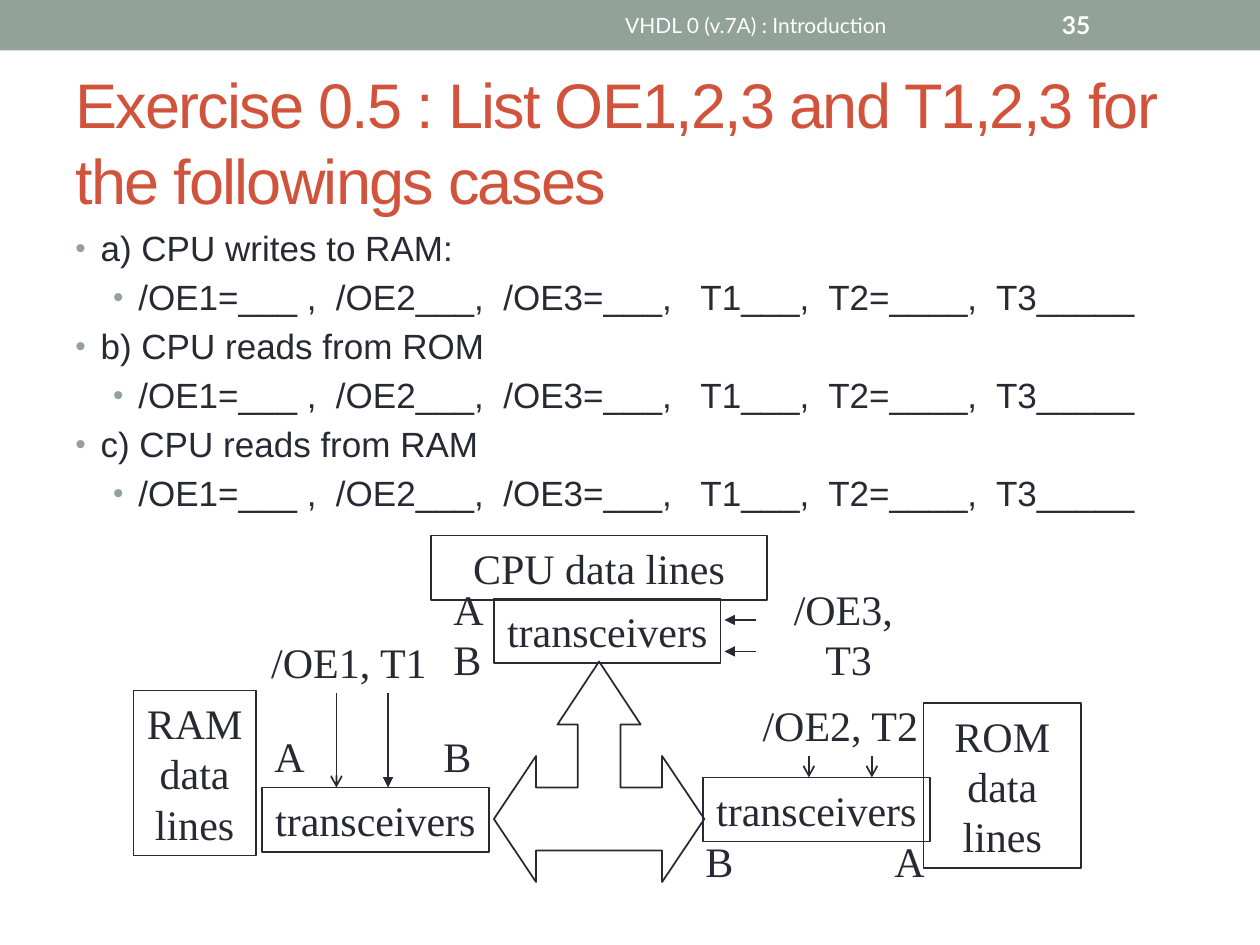
from lxml import etree
from pptx import Presentation
from pptx import util as u
from pptx.dml.color import RGBColor
from pptx.enum import shapes, text
from pptx.oxml.ns import qn

INK, SAGE, RUST, WHITE = "292934", "93A299", "D2533C", "FFFFFF"
SERIF = {"name": "Times New Roman", "size": u.Pt(24)}
BLANKS = "/OE1=___ ,  /OE2___,  /OE3=___,   T1___,  T2=____,  T3_____"
LEFT, CENTER = text.PP_ALIGN.LEFT, text.PP_ALIGN.CENTER
TOP, MIDDLE = text.MSO_ANCHOR.TOP, text.MSO_ANCHOR.MIDDLE


def rgb(value):
    return RGBColor.from_string(value)


def inches(box):
    return [u.Inches(v) for v in box]


def write(sp, lines, fmt, color=INK, align=CENTER, anchor=MIDDLE, wrap=True):
    tf = sp.text_frame
    tf.word_wrap, tf.vertical_anchor = wrap, anchor
    for i, line in enumerate(lines):
        p = tf.add_paragraph() if i else tf.paragraphs[0]
        p.alignment = align
        p.line_spacing = u.Pt(1.2 * fmt["size"].pt)
        r = p.add_run()
        r.text = line
        for key, value in fmt.items():
            setattr(r.font, key, value)
        r.font.color.rgb = rgb(color)
    return tf


def label(s, box, lines, fmt=SERIF, **options):
    return write(s.shapes.add_textbox(*inches(box)), lines, fmt, **options)


def outline(sp):
    sp.shadow.inherit = False
    sp.fill.background()
    sp.line.color.rgb, sp.line.width = rgb(INK), u.Pt(1)


def block(s, box, lines, wrap=False):
    sp = s.shapes.add_shape(shapes.MSO_SHAPE.RECTANGLE, *inches(box))
    outline(sp)
    write(sp, lines, SERIF, wrap=wrap)


def arrow(s, start, end, head):
    c = s.shapes.add_connector(shapes.MSO_CONNECTOR.STRAIGHT, *inches(start + end))
    c.line.color.rgb, c.line.width = rgb(INK), u.Pt(1)
    etree.SubElement(c.line._get_or_add_ln(), qn("a:tailEnd"), type=head)
    etree.SubElement(c._element.spPr, qn("a:effectLst"))


def bus_arrow(s, box):
    """Three-way arrow, mirrored about the centre of its box."""
    x, y, w, h = box
    half = [(0, 0), (0.33, 0.5), (0.17, 0.5), (0.17, 1), (0.5, 1),
            (0.5, 0.75), (w / 2, 1.25), (0.5, h), (0.5, 1.5)]
    points = half + [(-dx, dy) for dx, dy in half[:0:-1]]
    points = [(u.Inches(x + w / 2 + dx), u.Inches(y + dy)) for dx, dy in points]
    fb = s.shapes.build_freeform(*points[0])
    fb.add_line_segments(points[1:], close=True)
    outline(fb.convert_to_shape())


def header(s, box):
    x, y, w, h = box
    sp = s.shapes.add_shape(shapes.MSO_SHAPE.RECTANGLE, *inches(box))
    sp.shadow.inherit = False
    sp.fill.solid()
    sp.fill.fore_color.rgb = rgb(SAGE)
    sp.line.fill.background()
    label(s, (x + 3.75, y + 0.02, 4.5, h - 0.04), ["VHDL 0 (v.7A) : Introduction"],
          {"name": "Lato", "size": u.Pt(12)}, color=WHITE)
    label(s, (x + 8.33, y + 0.02, 1.17, h - 0.04), ["35"],
          {"name": "Lato", "size": u.Pt(14), "bold": True}, color=WHITE, align=LEFT)


def title(s, box):
    tf = label(s, box, ["Exercise 0.5 : List OE1,2,3 and T1,2,3 for the followings cases"],
               {"name": "Arial", "size": u.Pt(36)}, color=RUST, align=LEFT)
    tf.paragraphs[0].runs[0].font._element.set("spc", "-100")


def bullet(p, margin):
    pPr = p._p.get_or_add_pPr()
    pPr.set("marL", str(u.Inches(margin)))
    pPr.set("indent", str(u.Inches(-0.2)))
    clr = etree.SubElement(pPr, qn("a:buClr"))
    etree.SubElement(clr, qn("a:srgbClr"), val=SAGE)
    etree.SubElement(pPr, qn("a:buSzPct"), val="85000")
    etree.SubElement(pPr, qn("a:buFont"), typeface="Arial")
    etree.SubElement(pPr, qn("a:buChar"), char="•")


def cases(s, box):
    lines = []
    for case in ("a) CPU writes to RAM:", "b) CPU reads from ROM", "c) CPU reads from RAM"):
        lines += [case, BLANKS]
    tf = label(s, box, lines, {"name": "Arial", "size": u.Pt(20)}, align=LEFT, anchor=TOP)
    for i, p in enumerate(tf.paragraphs):
        p.level = i % 2
        p.space_before = u.Pt(4)
        bullet(p, 0.5 if p.level else 0.2)


def diagram(s, box):
    left, top = box[:2]

    def at(x, y, *size):
        return (left + x, top + y, *size)

    bus_arrow(s, at(2.86, 1, 1.67, 1.75))
    block(s, at(2.36, 0, 2.67, 0.51), ["CPU data lines"], wrap=True)
    for x, y in ((4.52, 1.92), (1.02, 2), (2.86, 0.5)):
        block(s, at(x, y, 1.8, 0.51), ["transceivers"])
    block(s, at(6.27, 1.33, 1.25, 1.31), ["ROM", "data", "lines"], wrap=True)
    block(s, at(0, 1.23, 0.97, 1.31), ["RAM", "data", "lines"])

    for x, y, w, h, lines in ((0.99, 0.75, 1.44, 0.5, ["/OE1, T1"]),
                              (4.89, 1.25, 1.44, 0.5, ["/OE2, T2"]),
                              (5.14, 0.33, 1.07, 0.9, ["/OE3, ", "T3"])):
        label(s, at(x, y, w, h), lines, wrap=False)
    for x, y, h, ports in ((2.44, 0.33, 0.9, "AB"), (1.02, 1.5, 0.5, "A"),
                           (2.36, 1.5, 0.5, "B"), (4.44, 2.33, 0.5, "B"),
                           (5.94, 2.33, 0.5, "A")):
        label(s, at(x, y, 0.43, h), ports, align=LEFT, anchor=TOP, wrap=False)

    for x, y, dx, dy, head in ((1.61, 1.25, 0, 0.75, "arrow"),
                               (2.02, 1.25, 0, 0.75, "triangle"),
                               (5.36, 1.75, 0, 0.17, "arrow"),
                               (5.86, 1.75, 0, 0.17, "arrow"),
                               (4.94, 0.67, -0.25, 0, "triangle"),
                               (4.94, 0.92, -0.25, 0, "triangle")):
        arrow(s, at(x, y), at(x + dx, y + dy), head)


def main():
    prs = Presentation()
    prs.slide_width, prs.slide_height = u.Inches(10), u.Inches(7.5)
    s = prs.slides.add_slide(prs.slide_layouts[6])
    header(s, (0, 0, 10, 0.4))
    title(s, (0.5, 0.58, 9, 1.08))
    cases(s, (0.5, 1.75, 9, 5.33))
    diagram(s, (1.06, 4.25, 7.52, 2.75))
    prs.save("out.pptx")


if __name__ == "__main__":
    main()
